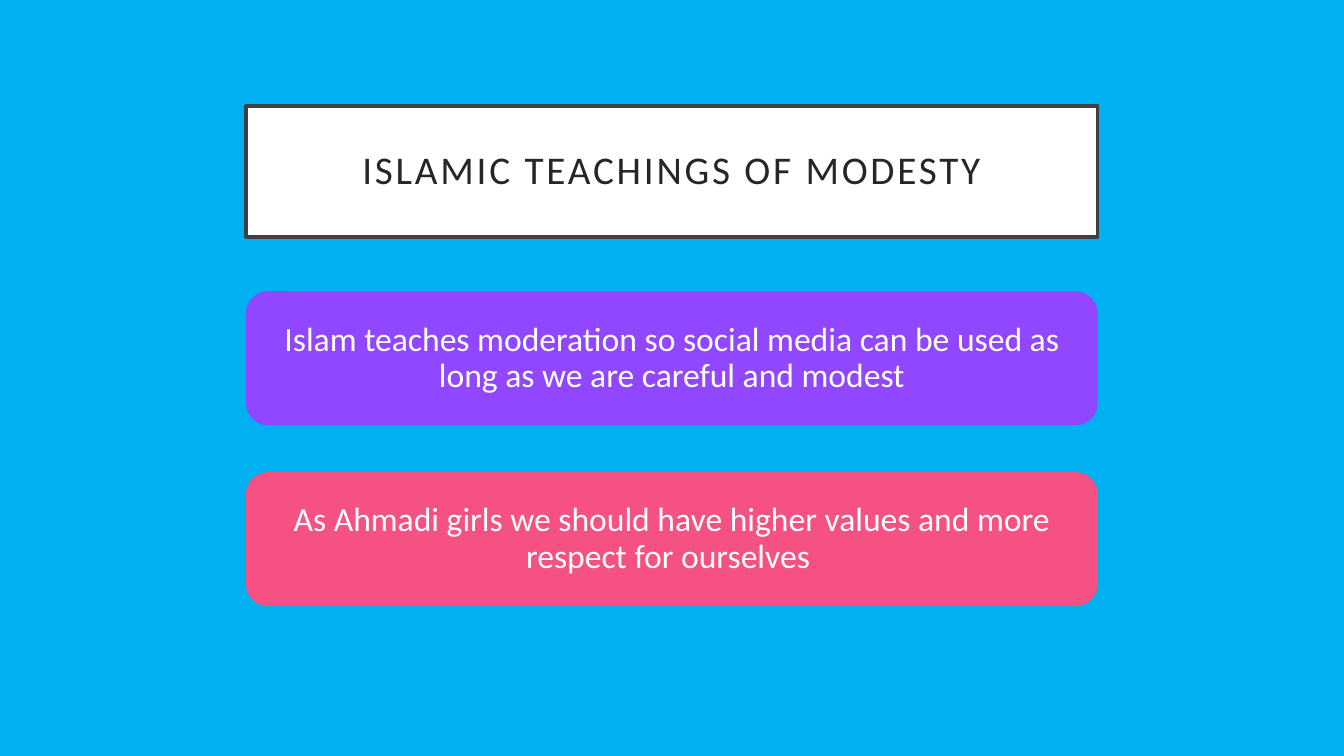
from pptx import Presentation
from pptx.dml.color import RGBColor
from pptx.enum.shapes import MSO_SHAPE
from pptx.enum.text import MSO_ANCHOR, MSO_AUTO_SIZE, PP_ALIGN
from pptx.util import Pt

ROUNDED = MSO_SHAPE.ROUNDED_RECTANGLE
MIDDLE, CENTER, NO_FIT = MSO_ANCHOR.MIDDLE, PP_ALIGN.CENTER, MSO_AUTO_SIZE.NONE
TITLE_ONLY = 5

COLORS = {
    "sky": "00B0F0",
    "white": "FFFFFF",
    "ink": "262626",
    "border": "404040",
    "violet": "9147FF",
    "pink": "F55183",
}
LEFT, WIDTH = 175.68, 608.4
TITLE_TOP, TITLE_HEIGHT = 75.6, 93.6
CARD_TOP, CARD_HEIGHT, CARD_STEP = 208.1, 95.7, 129.2
CARDS = [
    ("violet", "Islam teaches moderation so social media can be used as "
               "long as we are careful and modest"),
    ("pink", "As Ahmadi girls we should have higher values and more "
             "respect for ourselves "),
]


def rgb(name):
    return RGBColor.from_string(COLORS[name])


class SlideBuilder:
    font = "Calibri"

    def __init__(self, prs):
        self.s = prs.slides.add_slide(prs.slide_layouts[TITLE_ONLY])

    def background(self, color):
        fill = self.s.background.fill
        fill.solid()
        fill.fore_color.rgb = rgb(color)

    def add_text(self, sp, text, size, color, inset):
        """Set centred text in a shape and return its run."""
        tf = sp.text_frame
        frame = {"word_wrap": True, "auto_size": NO_FIT, "vertical_anchor": MIDDLE}
        for side in ("left", "top", "right", "bottom"):
            frame["margin_" + side] = Pt(inset)
        p = tf.paragraphs[0]
        r = p.add_run()
        r.text = text
        formats = [
            (tf, frame),
            (p, {"alignment": CENTER, "line_spacing": 0.9}),
            (r.font, {"name": self.font, "size": Pt(size), "bold": False}),
        ]
        for target, values in formats:
            for name, value in values.items():
                setattr(target, name, value)
        r.font.color.rgb = rgb(color)
        return r

    def title(self, text):
        sp = self.s.shapes.title
        box = {"left": LEFT, "top": TITLE_TOP, "width": WIDTH, "height": TITLE_HEIGHT}
        for name, value in box.items():
            setattr(sp, name, Pt(value))
        sp.fill.solid()
        sp.fill.fore_color.rgb = rgb("white")
        sp.line.color.rgb = rgb("border")
        sp.line.width = Pt(2.5)
        r = self.add_text(sp, text, 28, "ink", 14.4)
        r._r.get_or_add_rPr().set("spc", "200")  # letter spacing of 2 pt

    def card(self, top, color, text):
        sp = self.s.shapes.add_shape(ROUNDED, Pt(LEFT), Pt(top), Pt(WIDTH), Pt(CARD_HEIGHT))
        sp.shadow.inherit = False
        sp.fill.solid()
        sp.fill.fore_color.rgb = rgb(color)
        sp.line.fill.background()
        self.add_text(sp, text, 24, "white", 7.2)


def main():
    prs = Presentation()
    prs.slide_width, prs.slide_height = Pt(960), Pt(540)
    slide = SlideBuilder(prs)
    slide.background("sky")
    slide.title("ISLAMIC TEACHINGS OF MODESTY")
    for i, (color, text) in enumerate(CARDS):
        slide.card(CARD_TOP + i * CARD_STEP, color, text)
    prs.save("out.pptx")


if __name__ == "__main__":
    main()
